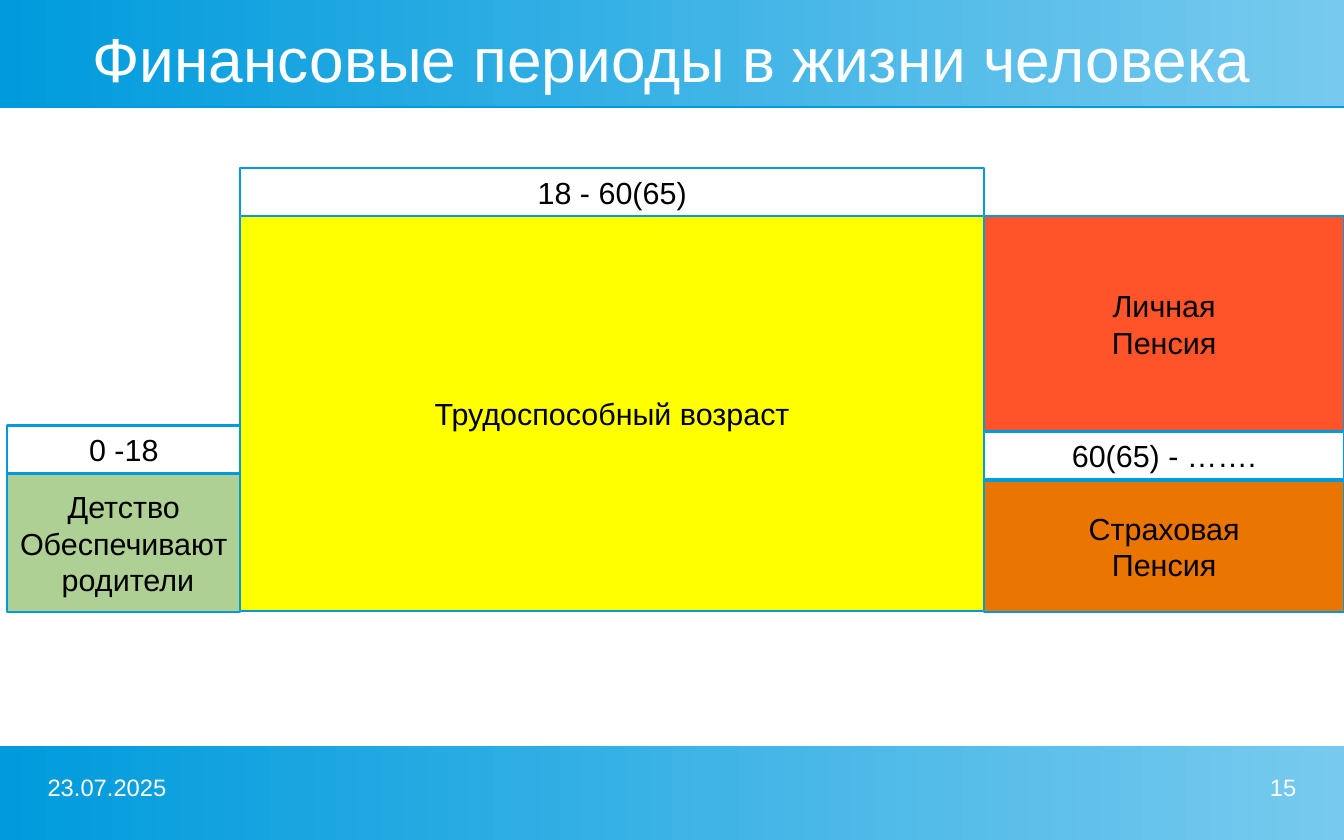
from lxml.etree import SubElement
from pptx import Presentation
from pptx.dml.color import RGBColor
from pptx.enum.shapes import MSO_SHAPE
from pptx.enum.text import MSO_ANCHOR, PP_ALIGN
from pptx.oxml.ns import qn
from pptx.util import Inches, Pt

BLUE = RGBColor(0x00, 0x9B, 0xDD)
LIGHT_BLUE = RGBColor(0x77, 0xCA, 0xEE)
YELLOW = RGBColor(0xFF, 0xFF, 0x00)
ORANGE = RGBColor(0xEA, 0x75, 0x00)
RED = RGBColor(0xFF, 0x54, 0x29)
GREEN = RGBColor(0xAF, 0xD0, 0x95)
WHITE = RGBColor(0xFF, 0xFF, 0xFF)
BLACK = RGBColor(0x00, 0x00, 0x00)

WIDTH, HEIGHT = 11.02, 6.89


class SlideBuilder:
    """Holds the slide and its common style."""

    font_name = "Arial"

    def __init__(self, slide):
        self.slide = slide

    def rectangle(self, left, top, width, height):
        shape = self.slide.shapes.add_shape(
            MSO_SHAPE.RECTANGLE, Inches(left), Inches(top), Inches(width), Inches(height))
        shape.shadow.inherit = False
        return shape

    def set_text(self, frame, text, size, color, align):
        frame.text = text
        for paragraph in frame.paragraphs:
            paragraph.alignment = align
            paragraph.font.name = self.font_name
            paragraph.font.size = Pt(size)
            paragraph.font.color.rgb = color

    def band(self, top, height):
        """Full-width gradient band with a thin shadow below it."""
        band = self.rectangle(0, top, WIDTH, height)
        band.line.fill.background()
        band.fill.gradient()
        band.fill.gradient_angle = 180
        for stop, color in zip(band.fill.gradient_stops, (LIGHT_BLUE, BLUE)):
            stop.color.rgb = color
        effects = band._element.spPr.find(qn("a:effectLst"))
        shadow = SubElement(effects, qn("a:outerShdw"), dist=str(Pt(0.9)),
                            dir="5400000", rotWithShape="0")
        SubElement(shadow, qn("a:srgbClr"), val=str(BLUE))

    def period(self, left, top, width, height, text, color=WHITE):
        """Outlined box with centred text."""
        box = self.rectangle(left, top, width, height)
        box.fill.solid()
        box.fill.fore_color.rgb = color
        box.line.color.rgb = BLUE
        box.line.width = Pt(1.42)
        frame = box.text_frame
        frame.word_wrap = False
        frame.vertical_anchor = MSO_ANCHOR.MIDDLE
        self.set_text(frame, text, 18, BLACK, PP_ALIGN.CENTER)

    def label(self, left, top, width, height, text, size, align, anchor=MSO_ANCHOR.TOP):
        """White text without margins."""
        frame = self.slide.shapes.add_textbox(
            Inches(left), Inches(top), Inches(width), Inches(height)).text_frame
        frame.word_wrap = True
        frame.vertical_anchor = anchor
        frame.margin_left = frame.margin_right = frame.margin_top = frame.margin_bottom = 0
        self.set_text(frame, text, size, WHITE, align)
        return frame


def main():
    presentation = Presentation()
    presentation.slide_width = Inches(WIDTH)
    presentation.slide_height = Inches(HEIGHT)
    builder = SlideBuilder(presentation.slides.add_slide(presentation.slide_layouts[6]))

    # Header and footer bands
    builder.band(0, 0.87)
    builder.band(6.12, 0.77)

    # Title
    title = builder.label(0.39, 0.22, 10.24, 0.58, "Финансовые периоды в жизни человека",
                          36.7, PP_ALIGN.CENTER, MSO_ANCHOR.MIDDLE)
    title.paragraphs[0].line_spacing = 0.9

    # Columns of the life periods
    childhood, work, pension = (0.06, 1.91), (1.97, 6.1), (8.07, 2.95)
    work_top, age_height = 1.77, 0.39

    def place(column, top, height, text, color=WHITE):
        left, width = column
        builder.period(left, top, width, height, text, color)

    # Period blocks
    place(work, work_top, 3.24, "Трудоспособный возраст", YELLOW)
    place(pension, 3.94, 1.08, "Страховая\nПенсия", ORANGE)
    place(childhood, 3.89, 1.13, "Детство\nОбеспечивают\n родители", GREEN)

    # Age ranges, with the personal pension above its own
    place(work, work_top - age_height, age_height, "18 - 60(65)")
    place(pension, 3.54, age_height, "60(65) - …….")
    place(pension, work_top, 1.77, "Личная\nПенсия", RED)
    place(childhood, 3.49, age_height, "0 -18")

    # Slide number and date
    builder.label(8.07, 6.34, 2.56, 0.44, "15", 14, PP_ALIGN.RIGHT)
    builder.label(0.39, 6.34, 2.56, 0.44, "23.07.2025", 14, PP_ALIGN.LEFT)

    presentation.save("out.pptx")


if __name__ == "__main__":
    main()
